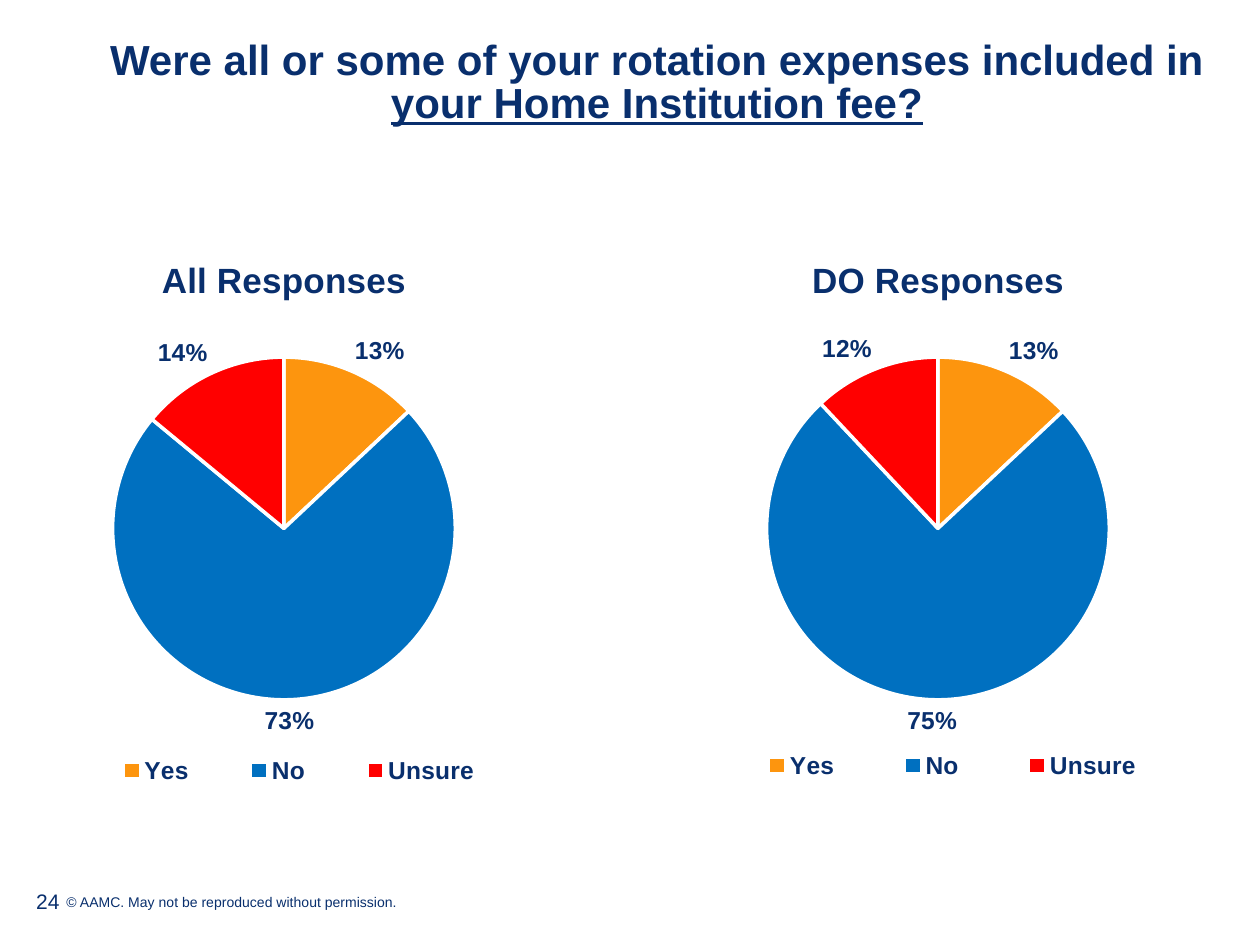
"""Build a slide comparing two pie charts of rotation expense responses."""
from dataclasses import dataclass
from typing import Any

from lxml.etree import SubElement
from pptx import Presentation
from pptx.chart.chart import Chart
from pptx.chart.data import CategoryChartData as ChartData
from pptx.dml.color import RGBColor
from pptx.enum.chart import XL_CHART_TYPE as ChartType
from pptx.enum.chart import XL_LABEL_POSITION as LabelPosition
from pptx.enum.chart import XL_LEGEND_POSITION as LegendPosition
from pptx.enum.text import MSO_ANCHOR as Anchor
from pptx.enum.text import PP_ALIGN as Align
from pptx.oxml.ns import qn
from pptx.util import Cm, Pt

NAVY = RGBColor(0x09, 0x2F, 0x6D)
ORANGE = RGBColor(0xFD, 0x95, 0x0E)
BLUE = RGBColor(0x00, 0x70, 0xC0)
RED = RGBColor(0xFF, 0x00, 0x00)
WHITE = RGBColor(0xFF, 0xFF, 0xFF)

ANSWERS = {"Yes": ORANGE, "No": BLUE, "Unsure": RED}
CHART_TOP, CHART_HEIGHT = Cm(4.7), Cm(11.43)
PIE_TOP, PIE_SIZE = Cm(7.2), Cm(6.91)
LEGEND_HEIGHT = Cm(0.85)


@dataclass
class Span:
    """A run of text and its special formats."""
    text: str
    formats: dict[str, Any]


@dataclass
class TextBox:
    """A one-paragraph text box."""
    left: Cm
    top: Cm
    width: Cm
    height: Cm
    size: int
    spans: list[Span]
    frame_formats: dict[str, Any]
    paragraph_formats: dict[str, Any]


@dataclass
class Pie:
    """A pie chart with its own legend place."""
    title: str
    series: str
    values: tuple[int, ...]
    left: Cm
    width: Cm
    legend_left: Cm
    legend_top: Cm
    legend_width: Cm


TEXTS = [
    TextBox(Cm(1.09), Cm(17.88), Cm(20.88), Cm(0.58), 8,
            [Span("© AAMC. May not be reproduced without permission.", {})], {}, {}),
    TextBox(Cm(1.6), Cm(0.84), Cm(23.29), Cm(1.73), 24,
            [Span("Were all or some of your rotation expenses included in ", {"bold": True}),
             Span("your Home Institution fee?", {"bold": True, "underline": True})],
            {"vertical_anchor": Anchor.BOTTOM, "margin_left": 0, "margin_right": 0,
             "margin_top": 0, "margin_bottom": 0},
            {"alignment": Align.CENTER, "line_spacing": 0.85}),
    TextBox(Cm(0.48), Cm(17.65), Cm(5.72), Cm(1.02), 12,
            [Span("24", {})], {"vertical_anchor": Anchor.MIDDLE}, {}),
]

PIES = [
    Pie("All Responses", "Series 1", (13, 73, 14), Cm(-2.34), Cm(16.13),
        Cm(1.4), Cm(15.11), Cm(9.27)),
    Pie("DO Responses", "DO Responses", (13, 75, 12), Cm(10.49), Cm(16.84),
        Cm(14.25), Cm(15.01), Cm(9.92)),
]


def apply_formats(target: Any, formats: dict[str, Any]) -> None:
    """Set each named attribute on the target."""
    for name, value in formats.items():
        setattr(target, name, value)


def style_font(font: Any, size: int, color: RGBColor = NAVY, **formats: Any) -> None:
    """Give a font the slide's typeface, with a size and colour."""
    apply_formats(font, {"name": "Arial", "size": Pt(size), **formats})
    font.color.rgb = color


def draw_text(page: Any, item: TextBox) -> None:
    """Draw one text box."""
    box = page.shapes.add_textbox(item.left, item.top, item.width, item.height)
    frame = box.text_frame
    apply_formats(frame, {"word_wrap": True, **item.frame_formats})
    para = frame.paragraphs[0]
    apply_formats(para, item.paragraph_formats)
    for part in item.spans:
        span = para.add_run()
        span.text = part.text
        style_font(span.font, item.size, **part.formats)


def place_part(chart: Chart, tag: str, index: int, inner: bool,
               fractions: dict[str, float]) -> None:
    """Give a chart part a manual layout in fractions of the chart."""
    part = next(chart.element.iter(qn(tag))) if hasattr(chart, "element") else \
        next(chart._chartSpace.iter(qn(tag)))
    for old in part.findall(qn("c:layout")):
        part.remove(old)
    layout = SubElement(part, qn("c:layout"))
    part.insert(index, layout)
    manual = SubElement(layout, qn("c:manualLayout"))
    if inner:
        SubElement(manual, qn("c:layoutTarget")).set("val", "inner")
    for mode in ("xMode", "yMode"):
        SubElement(manual, qn(f"c:{mode}")).set("val", "edge")
    for name, value in fractions.items():
        SubElement(manual, qn(f"c:{name}")).set("val", f"{value:.4f}")


def draw_pie(page: Any, pie: Pie) -> None:
    """Draw one pie chart with title, labels and legend."""
    data = ChartData(number_format="General")
    data.categories = list(ANSWERS)
    data.add_series(pie.series, pie.values)
    chart = page.shapes.add_chart(ChartType.PIE, pie.left, CHART_TOP, pie.width,
                                  CHART_HEIGHT, data).chart
    style_font(chart.font, 10, WHITE)

    chart.has_title = True
    frame = chart.chart_title.text_frame
    frame.text = pie.title
    style_font(frame.paragraphs[0].runs[0].font, 20, bold=True)

    plot = chart.plots[0]
    plot.vary_by_categories = True
    for index, color in enumerate(ANSWERS.values()):
        point = plot.series[0].points[index].format
        point.fill.solid()
        point.fill.fore_color.rgb = color
        point.line.color.rgb = WHITE
        point.line.width = Pt(2)

    plot.has_data_labels = True
    labels = plot.data_labels
    apply_formats(labels, {"show_percentage": True, "show_value": False,
                           "number_format": "0%", "number_format_is_linked": False,
                           "position": LabelPosition.OUTSIDE_END})
    style_font(labels.font, 14, bold=True)

    chart.has_legend = True
    apply_formats(chart.legend, {"position": LegendPosition.BOTTOM,
                                 "include_in_layout": False})
    style_font(chart.legend.font, 14, bold=True)

    place_part(chart, "c:plotArea", 0, True, {
        "x": (1 - PIE_SIZE / pie.width) / 2,
        "y": (PIE_TOP - CHART_TOP) / CHART_HEIGHT,
        "w": PIE_SIZE / pie.width,
        "h": PIE_SIZE / CHART_HEIGHT})
    place_part(chart, "c:legend", 1, False, {
        "x": (pie.legend_left - pie.left) / pie.width,
        "y": (pie.legend_top - CHART_TOP) / CHART_HEIGHT,
        "w": pie.legend_width / pie.width,
        "h": LEGEND_HEIGHT / CHART_HEIGHT})


def main() -> None:
    """Build and save the deck."""
    deck = Presentation()
    apply_formats(deck, {"slide_width": Cm(25.4), "slide_height": Cm(19.05)})
    page = deck.slides.add_slide(deck.slide_layouts[6])
    for item in TEXTS:
        draw_text(page, item)
    for pie in PIES:
        draw_pie(page, pie)
    deck.save("out.pptx")


if __name__ == "__main__":
    main()
